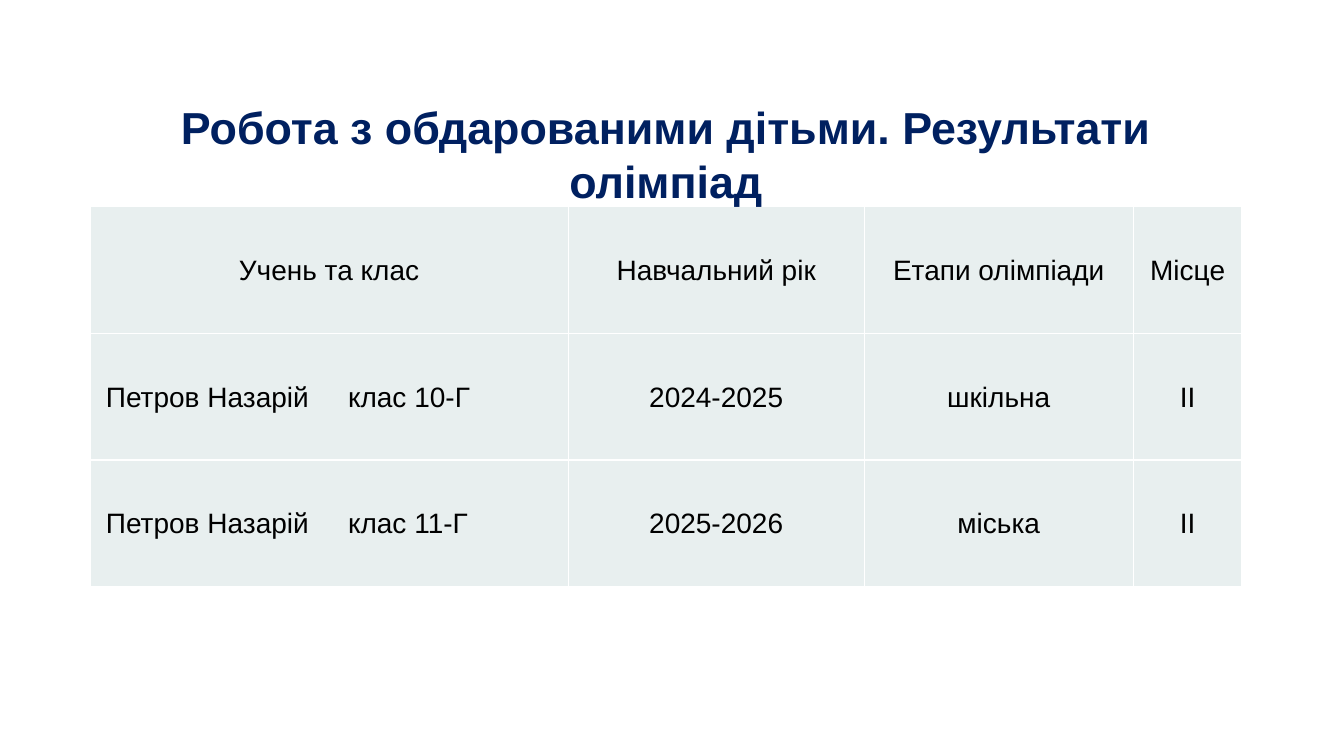
from dataclasses import dataclass

from lxml.etree import SubElement
from pptx import Presentation
from pptx.dml.color import RGBColor
from pptx.enum.text import MSO_ANCHOR, MSO_AUTO_SIZE, PP_ALIGN
from pptx.oxml.ns import qn
from pptx.slide import Slide
from pptx.table import _Cell
from pptx.text.text import _Paragraph
from pptx.util import Cm, Length, Pt


@dataclass(frozen=True)
class Theme:
    font: str = "Arial"
    title_size: Length = Pt(32)
    table_size: Length = Pt(20)
    title_color: RGBColor = RGBColor(0x00, 0x20, 0x60)
    text_color: RGBColor = RGBColor(0x00, 0x00, 0x00)
    cell_fill: RGBColor = RGBColor(0xE8, 0xEF, 0xEF)
    border_color: RGBColor = RGBColor(0xFF, 0xFF, 0xFF)
    border_width: Length = Pt(1)


@dataclass(frozen=True)
class OlympiadResult:
    student: str
    year: str
    stage: str
    place: str


THEME = Theme()
TITLE = "Робота з обдарованими дітьми. Результати олімпіад"
HEADINGS = ("Учень та клас", "Навчальний рік", "Етапи олімпіади", "Місце")
RESULTS = (
    OlympiadResult("Петров Назарій\tклас 10-Г", "2024-2025", "шкільна", "ІІ"),
    OlympiadResult("Петров Назарій\tклас 11-Г", "2025-2026", "міська", "ІІ"),
)
COLUMN_WIDTHS = (Cm(12.05), Cm(7.46), Cm(6.78), Cm(2.74))
ROW_HEIGHT = Cm(3.19)
LEFT, WIDTH = Cm(2.27), Cm(29.03)
TITLE_TOP, TITLE_HEIGHT = Cm(2.39), Cm(2.39)
TABLE_TOP = Cm(5.21)
CELL_MARGIN = Cm(0.03)
STUDENT_MARGIN = Cm(0.4)
CLASS_TAB = Cm(6.1)


def format_paragraph(paragraph: _Paragraph, size: Length, color: RGBColor,
                     alignment: PP_ALIGN, bold: bool = False) -> None:
    paragraph.alignment = alignment
    for run in paragraph.runs:
        run.font.name = THEME.font
        run.font.size = size
        run.font.bold = bold
        run.font.color.rgb = color


def add_borders(cell: _Cell) -> None:
    properties = cell._tc.get_or_add_tcPr()
    for side in ("a:lnL", "a:lnR", "a:lnT", "a:lnB"):
        line = SubElement(properties, qn(side), w=str(THEME.border_width))
        fill = SubElement(line, qn("a:solidFill"))
        SubElement(fill, qn("a:srgbClr"), val=str(THEME.border_color))


def add_class_tab(paragraph: _Paragraph) -> None:
    tabs = SubElement(paragraph._p.get_or_add_pPr(), qn("a:tabLst"))
    SubElement(tabs, qn("a:tab"), pos=str(CLASS_TAB), algn="l")


def fill_cell(cell: _Cell, text: str, is_student: bool) -> None:
    cell.text_frame.text = text
    cell.vertical_anchor = MSO_ANCHOR.MIDDLE
    cell.margin_left = STUDENT_MARGIN if is_student else CELL_MARGIN
    cell.margin_right = cell.margin_top = CELL_MARGIN
    cell.margin_bottom = 0
    add_borders(cell)
    cell.fill.solid()
    cell.fill.fore_color.rgb = THEME.cell_fill
    paragraph = cell.text_frame.paragraphs[0]
    if is_student:
        add_class_tab(paragraph)
    alignment = PP_ALIGN.LEFT if is_student else PP_ALIGN.CENTER
    format_paragraph(paragraph, THEME.table_size, THEME.text_color, alignment)


def add_results_table(slide: Slide) -> None:
    rows = [HEADINGS] + [(result.student, result.year, result.stage, result.place)
                         for result in RESULTS]
    table = slide.shapes.add_table(len(rows), len(HEADINGS), LEFT, TABLE_TOP,
                                   WIDTH, ROW_HEIGHT * len(rows)).table
    table.first_row = False
    table.horz_banding = False
    for column, width in zip(table.columns, COLUMN_WIDTHS):
        column.width = width
    for row_index, texts in enumerate(rows):
        table.rows[row_index].height = ROW_HEIGHT
        for column_index, text in enumerate(texts):
            is_student = row_index > 0 and column_index == 0
            fill_cell(table.cell(row_index, column_index), text, is_student)


def format_title(slide: Slide) -> None:
    title = slide.shapes.title
    title.left, title.top = LEFT, TITLE_TOP
    title.width, title.height = WIDTH, TITLE_HEIGHT
    text_frame = title.text_frame
    text_frame.text = TITLE
    text_frame.word_wrap = True
    text_frame.auto_size = MSO_AUTO_SIZE.SHAPE_TO_FIT_TEXT
    text_frame.vertical_anchor = MSO_ANCHOR.TOP
    format_paragraph(text_frame.paragraphs[0], THEME.title_size,
                     THEME.title_color, PP_ALIGN.CENTER, bold=True)


def bring_title_to_front(slide: Slide) -> None:
    title_element = slide.shapes.title.element
    title_element.getparent().append(title_element)


def main() -> None:
    presentation = Presentation()
    presentation.slide_width = Cm(33.87)
    presentation.slide_height = Cm(19.05)
    slide = presentation.slides.add_slide(presentation.slide_layouts[5])
    format_title(slide)
    add_results_table(slide)
    bring_title_to_front(slide)
    presentation.save("out.pptx")


if __name__ == "__main__":
    main()
